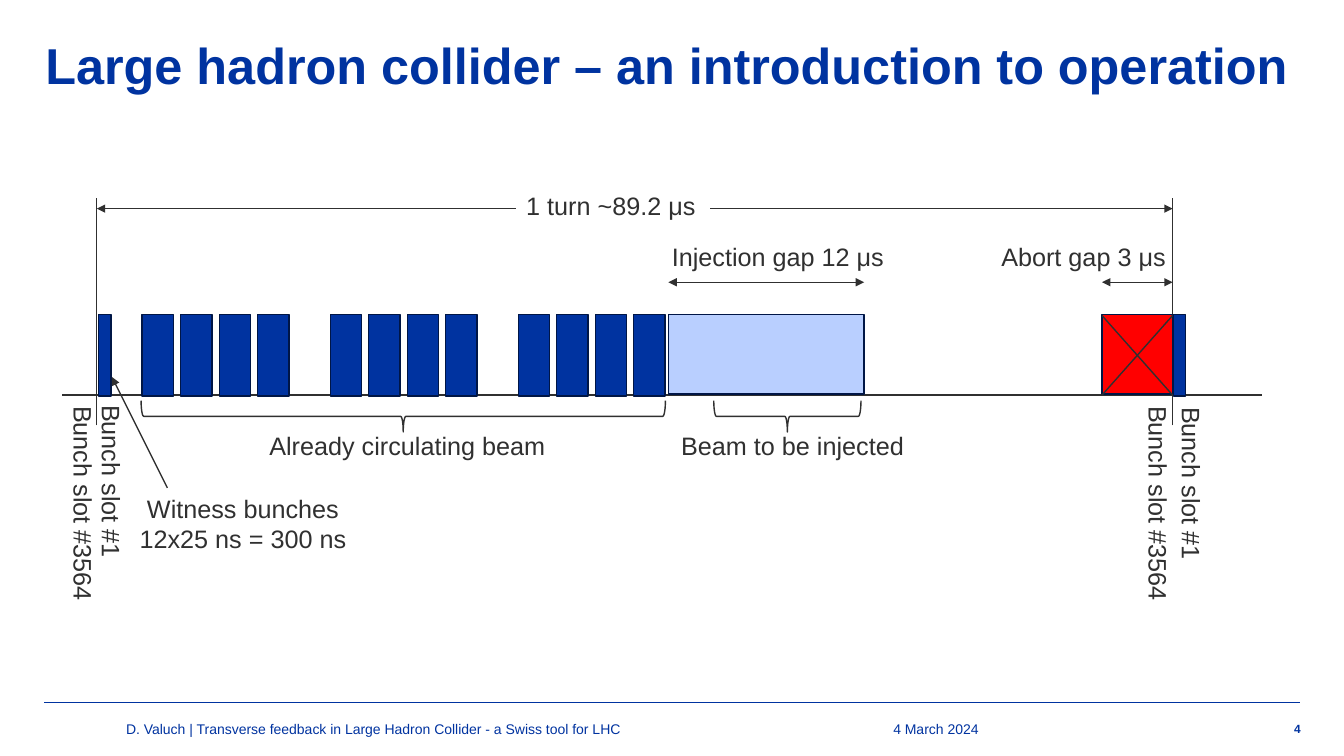
import pptx
import pptx.util
import pptx.dml.color
import pptx.enum.shapes
import pptx.enum.text
import pptx.oxml
import pptx.oxml.ns
from dataclasses import dataclass

SHAPE = pptx.enum.shapes.MSO_SHAPE
ALIGN = pptx.enum.text.PP_ALIGN
ANCHOR = pptx.enum.text.MSO_ANCHOR


@dataclass(frozen=True)
class Theme:
    font: str = "Arial"
    blue: str = "0033A0"
    navy: str = "001646"
    pale: str = "B9CFFF"
    red: str = "FF0000"
    white: str = "FFFFFF"
    ink: str = "303030"
    title_size: float = 36
    label_size: float = 18
    footer_size: float = 10
    number_size: float = 8.5
    cell: float = 0.1


class TimingSlide:
    """Draws on one slide; every length counts grid columns and rows."""

    def __init__(self, slide, theme):
        self.slide = slide
        self.theme = theme

    def span(self, *cells):
        return [pptx.util.Inches(count * self.theme.cell) for count in cells]

    def color(self, value):
        return pptx.dml.color.RGBColor.from_string(value)

    def text(self, col, row, cols, rows, words, size=None, color=None, bold=False,
             align=ALIGN.LEFT, anchor=ANCHOR.TOP, inset=True, turn=0, spacing=None, fill=None):
        box = self.slide.shapes.add_textbox(*self.span(col, row, cols, rows))
        box.rotation = turn
        if fill:
            box.fill.solid()
            box.fill.fore_color.rgb = self.color(fill)
        frame = box.text_frame
        frame.word_wrap = True
        frame.vertical_anchor = anchor
        if not inset:
            frame.margin_left = frame.margin_right = frame.margin_top = frame.margin_bottom = 0
        frame.text = words
        for paragraph in frame.paragraphs:
            paragraph.alignment = align
            paragraph.line_spacing = spacing
            paragraph.font.name = self.theme.font
            paragraph.font.size = pptx.util.Pt(size or self.theme.label_size)
            paragraph.font.bold = bold
            paragraph.font.color.rgb = self.color(color or self.theme.ink)

    def footer(self, col, cols, words, **style):
        options = dict(size=self.theme.footer_size, color=self.theme.blue,
                       anchor=ANCHOR.MIDDLE, inset=False)
        self.text(col, 70.3, cols, 4, words, **{**options, **style})

    def vertical_label(self, center_col, center_row, cols, words):
        self.text(center_col - cols / 2, center_row - 2, cols, 4, words, turn=90)

    def block(self, col, cols, rows, fill):
        block = self.slide.shapes.add_shape(SHAPE.RECTANGLE, *self.span(col, 31.2, cols, rows))
        block.shadow.inherit = False
        block.fill.solid()
        block.fill.fore_color.rgb = self.color(fill)
        block.line.color.rgb = self.color(self.theme.navy)
        block.line.width = pptx.util.Pt(1)

    def brace(self, center_col, center_row, cols):
        depth = 3.1
        brace = self.slide.shapes.add_shape(SHAPE.LEFT_BRACE, *self.span(
            center_col - depth / 2, center_row - cols / 2, depth, cols))
        brace.rotation = 270
        brace.shadow.inherit = False
        brace.fill.background()
        brace.line.color.rgb = self.color(self.theme.ink)
        brace.line.width = pptx.util.Pt(1)

    def line(self, col, row, end_col, end_row, arrows=(), color=None, width=1):
        line = self.slide.shapes.add_connector(
            pptx.enum.shapes.MSO_CONNECTOR.STRAIGHT, *self.span(col, row, end_col, end_row))
        line.line.color.rgb = self.color(color or self.theme.ink)
        line.line.width = pptx.util.Pt(width)
        stroke = line.line._get_or_add_ln()
        for arrow in arrows:
            tip = pptx.oxml.parse_xml(f'<a:{arrow} {pptx.oxml.ns.nsdecls("a")} type="triangle"/>')
            stroke.append(tip)
        line._element.spPr.append(
            pptx.oxml.parse_xml(f'<a:effectLst {pptx.oxml.ns.nsdecls("a")}/>'))

    def duration(self, col, end_col, row):
        self.line(col, row, end_col, row, arrows=("headEnd", "tailEnd"))


def main():
    theme = Theme()
    deck = pptx.Presentation()
    deck.slide_width = pptx.util.Inches(13.33)
    deck.slide_height = pptx.util.Inches(7.5)
    page = TimingSlide(deck.slides.add_slide(deck.slide_layouts[6]), theme)

    page.line(4.4, 69.7, 128.9, 69.7, color=theme.blue, width=0.75)
    page.text(4.5, 4.1, 124.4, 11.7, "Large hadron collider – an introduction to operation",
              size=theme.title_size, color=theme.blue, bold=True, inset=False, spacing=0.9)
    page.footer(88.6, 19.4, "4 March 2024")
    page.footer(12.5, 74.2, "D. Valuch | Transverse feedback in Large Hadron Collider"
                            " - a Swiss tool for LHC")
    page.footer(121.5, 7.5, "4", size=theme.number_size, bold=True, align=ALIGN.RIGHT)

    turn_start, turn_end = 9.6, 116.3
    axis_row = 39.2
    page.line(6.2, axis_row, 125.2, axis_row)
    page.duration(turn_start, turn_end, 20.7)
    page.text(51.2, 18.4, 19.2, 4, "1 turn ~89.2 μs", fill=theme.white)
    for boundary in (turn_start, turn_end):
        page.line(boundary, 42.2, boundary, 19.6)

    abort_start, abort_cols = 109.3, 7
    page.block(abort_start, abort_cols, 7.9, theme.red)
    page.line(turn_end, axis_row, abort_start, 31.3)
    page.line(turn_end, 31.3, abort_start, axis_row)
    page.text(97.2, 23.4, 19.4, 4, "Abort gap 3 μs", align=ALIGN.RIGHT)
    page.duration(abort_start, turn_end, 28)

    injection_start, injection_cols = 66.3, 19.4
    page.block(injection_start, injection_cols, 7.9, theme.pale)
    page.text(65.2, 23.4, 23.9, 4, "Injection gap 12 μs", align=ALIGN.CENTER)
    page.duration(injection_start, injection_start + injection_cols, 28)

    for witness_col in (9.8, 116.4):
        page.block(witness_col, 1.2, 8.1, theme.blue)
    for train in range(3):
        for batch in range(4):
            page.block(14.1 + 18.65 * train + 3.82 * batch, 3.1, 8.1, theme.blue)

    page.text(12.6, 48.4, 23, 7.1, "Witness bunches\n12x25 ns = 300 ns", align=ALIGN.CENTER)
    page.line(11.1, 37.4, 16.6, 48.4, arrows=("headEnd",))

    for brace_col, brace_cols, label_col, words in (
            (40, 52, 22, "Already circulating beam"),
            (78.1, 14.6, 60.2, "Beam to be injected")):
        page.brace(brace_col, 41.3, brace_cols)
        page.text(label_col, 42.2, 36.8, 4, words, align=ALIGN.CENTER)

    for first_col, first_row, last_col in ((11.1, 49.6, 8.3), (118.2, 49.8, 114.9)):
        page.vertical_label(first_col, first_row, 20.8, "Bunch slot #1")
        page.vertical_label(last_col, 50.8, 23, "Bunch slot #3564")

    deck.save("out.pptx")


if __name__ == "__main__":
    main()
